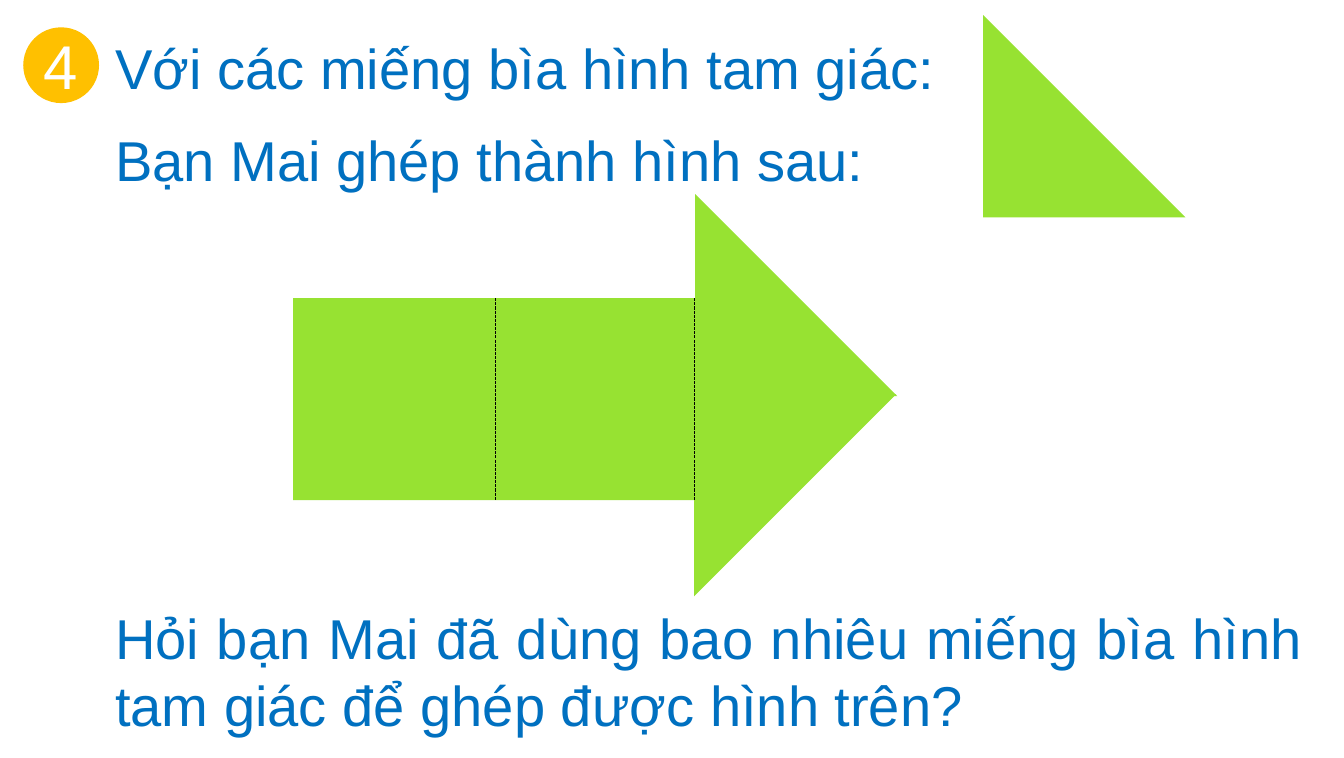
from dataclasses import dataclass

from lxml.etree import SubElement
from pptx import Presentation
from pptx.dml.color import RGBColor
from pptx.enum.dml import MSO_LINE
from pptx.enum.shapes import MSO_CONNECTOR, MSO_SHAPE
from pptx.enum.text import MSO_ANCHOR, MSO_AUTO_SIZE, PP_ALIGN
from pptx.oxml.ns import qn
from pptx.shapes.autoshape import Shape
from pptx.shapes.shapetree import SlideShapes
from pptx.text.text import _Paragraph
from pptx.util import Inches, Pt


@dataclass(frozen=True)
class Theme:
    font: str = "Arial"
    body: Pt = Pt(40)
    number: Pt = Pt(44)
    blue: RGBColor = RGBColor(0x00, 0x70, 0xC0)
    gold: RGBColor = RGBColor(0xFF, 0xC0, 0x00)
    green: RGBColor = RGBColor(0x97, 0xE2, 0x32)
    white: RGBColor = RGBColor(0xFF, 0xFF, 0xFF)
    black: RGBColor = RGBColor(0x00, 0x00, 0x00)


@dataclass(frozen=True)
class Line:
    text: str
    top: float
    height: float


@dataclass(frozen=True)
class Piece:
    left: float
    top: float
    turn: int = 0


THEME = Theme()
SIDE = 2.0  # leg of each triangle and side of each square
BODY_LEFT, BODY_TOP = 2.9, 2.95

LINES = (
    Line("Với các miếng bìa hình tam giác:", 0.28, 0.77),
    Line("Bạn Mai ghép thành hình sau:", 1.19, 0.77),
    Line("Hỏi bạn Mai đã dùng bao nhiêu miếng bìa hình tam giác "
         "để ghép được hình trên?", 5.92, 1.45),
)
SAMPLE = Piece(9.73, 0.15)
HEAD = (Piece(6.87, 3.9, 90), Piece(6.88, 1.92))
FOLDS = (4.9, 6.87)


def paint(shape: Shape, color: RGBColor) -> None:
    shape.shadow.inherit = False
    shape.fill.solid()
    shape.fill.fore_color.rgb = color
    shape.line.fill.background()


def write(para: _Paragraph, text: str, size: Pt, color: RGBColor,
          align: PP_ALIGN) -> None:
    para.text = text
    para.alignment = align
    para.font.name = THEME.font
    para.font.size = size
    para.font.color.rgb = color


def add_badge(shapes: SlideShapes) -> None:
    badge = shapes.add_shape(MSO_SHAPE.OVAL, Inches(0.23), Inches(0.27),
                             Inches(0.75), Inches(0.75))
    paint(badge, THEME.gold)
    frame = badge.text_frame
    frame.margin_left = frame.margin_right = 0
    frame.margin_top = frame.margin_bottom = 0
    frame.vertical_anchor = MSO_ANCHOR.MIDDLE
    write(frame.paragraphs[0], "4", THEME.number, THEME.white, PP_ALIGN.CENTER)


def add_line(shapes: SlideShapes, line: Line) -> None:
    box = shapes.add_textbox(Inches(1.04), Inches(line.top),
                             Inches(11.94), Inches(line.height))
    frame = box.text_frame
    frame.word_wrap = True
    frame.auto_size = MSO_AUTO_SIZE.SHAPE_TO_FIT_TEXT
    write(frame.paragraphs[0], line.text, THEME.body, THEME.blue,
          PP_ALIGN.JUSTIFY)


def add_piece(shapes: SlideShapes, piece: Piece) -> None:
    left, top = Inches(piece.left), Inches(piece.top)
    leg = Inches(SIDE)
    outline = shapes.build_freeform(left, top + leg)
    outline.add_line_segments([(left, top), (left + leg, top + leg)])
    shape = outline.convert_to_shape()
    shape.rotation = piece.turn
    paint(shape, THEME.green)


def add_fold(shapes: SlideShapes, x: float) -> None:
    fold = shapes.add_connector(MSO_CONNECTOR.STRAIGHT, Inches(x),
                                Inches(BODY_TOP), Inches(x),
                                Inches(BODY_TOP + SIDE))
    fold.line.color.rgb = THEME.black
    fold.line.width = Pt(0.75)
    fold.line.dash_style = MSO_LINE.SQUARE_DOT
    SubElement(fold._element.spPr, qn("a:effectLst"))


def main() -> None:
    deck = Presentation()
    deck.slide_width, deck.slide_height = Inches(13.3), Inches(7.5)
    shapes = deck.slides.add_slide(deck.slide_layouts[6]).shapes

    # Exercise number and wording
    add_badge(shapes)
    for line in LINES:
        add_line(shapes, line)

    # Sample triangle
    add_piece(shapes, SAMPLE)

    # Arrow: two squares, then two triangles as its head
    body = shapes.add_shape(MSO_SHAPE.RECTANGLE, Inches(BODY_LEFT),
                            Inches(BODY_TOP), Inches(2 * SIDE), Inches(SIDE))
    paint(body, THEME.green)
    for piece in HEAD:
        add_piece(shapes, piece)
    for x in FOLDS:
        add_fold(shapes, x)

    deck.save("out.pptx")


if __name__ == "__main__":
    main()
